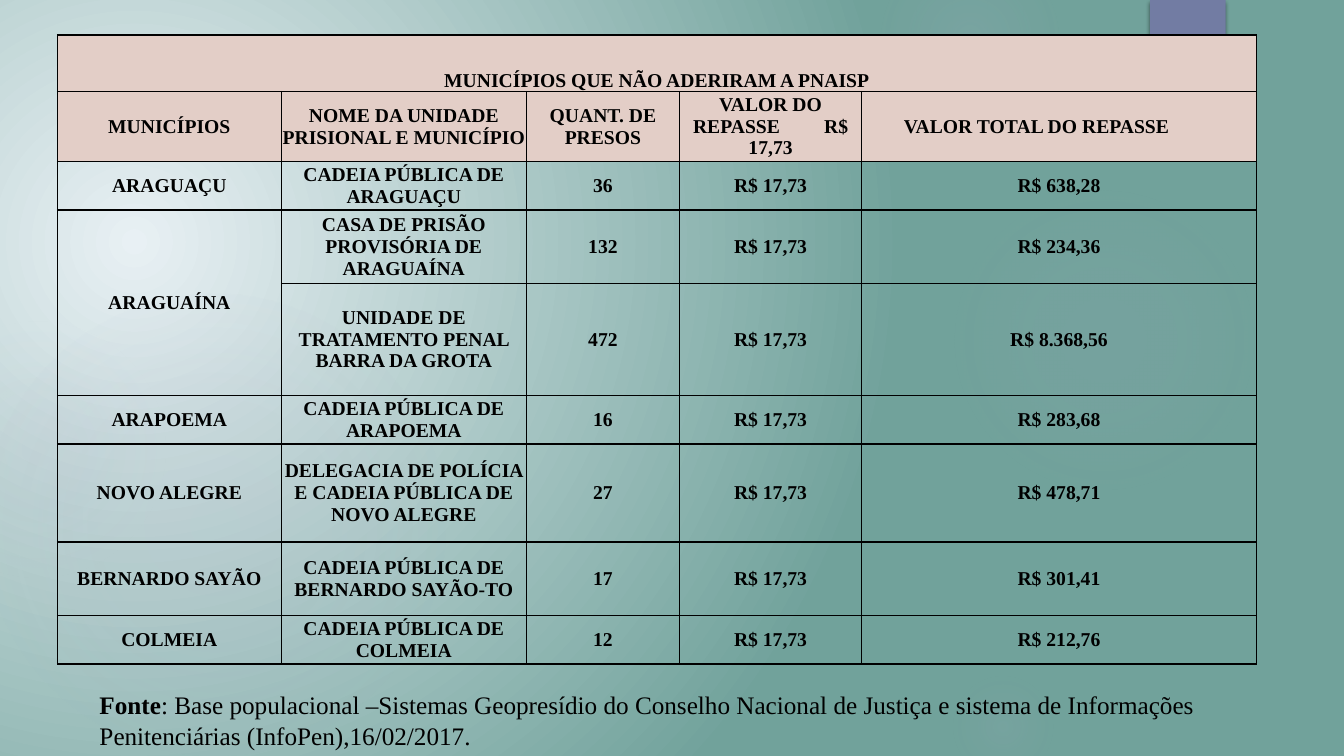
from lxml.etree import SubElement
from pptx import Presentation
from pptx.dml.color import RGBColor
from pptx.enum.shapes import MSO_SHAPE
from pptx.enum.text import MSO_ANCHOR, PP_ALIGN
from pptx.oxml import parse_xml
from pptx.oxml.ns import nsdecls, qn
from pptx.util import Pt

rgb = RGBColor.from_string
FONT = {"name": "Times New Roman", "bold": True}


def set_radial_fill(parent, stops, to):
    """Replace the solid fill in parent; stops are (position, colour, opacity) in percent."""
    marks = "".join(
        f'<a:gs pos="{pos * 1000}"><a:srgbClr val="{color}">'
        f'<a:alpha val="{alpha * 1000}"/></a:srgbClr></a:gs>'
        for pos, color, alpha in stops)
    edges = " ".join(f'{side}="{v * 1000}"' for side, v in zip("ltrb", to))
    grad = parse_xml(
        f'<a:gradFill {nsdecls("a")} rotWithShape="1"><a:gsLst>{marks}</a:gsLst>'
        f'<a:path path="circle"><a:fillToRect {edges}/></a:path></a:gradFill>')
    parent.replace(parent.find(qn("a:solidFill")), grad)


def add_run(p, text, size, **extra):
    r = p.add_run()
    r.text = text
    for key, value in {**FONT, "size": Pt(size), **extra}.items():
        setattr(r.font, key, value)
    r.font.color.rgb = rgb("000000")
    return r


prs = Presentation()
prs.slide_width, prs.slide_height = Pt(960), Pt(540)
s = prs.slides.add_slide(prs.slide_layouts[6])

# Background
s.background.fill.solid()
set_radial_fill(s.element.find(".//" + qn("p:bgPr")),
                [(0, "E8F0F4", 100), (100, "71A29B", 100)], (45, 65, 125, 100))

# Glowing circles: left, top, diameter, gradient stops
HAZE = "AAB0C8"
circles = [
    (-12, 210, 330, [(0, HAZE, 11), (36, HAZE, 10), (75, HAZE, 0)]),
    (-66, 228, 186, [(0, HAZE, 8), (36, HAZE, 5), (71, "EBF2F4", 0)]),
    (677.5, 132, 222, [(0, HAZE, 7), (36, HAZE, 6), (69, HAZE, 0)]),
    (630, -36, 126, [(0, HAZE, 14), (36, HAZE, 7), (73, HAZE, 0)]),
    (677.5, 480, 78, [(0, HAZE, 10), (31, HAZE, 5), (66, HAZE, 0)]),
]
for left, top, size, stops in circles:
    sp = s.shapes.add_shape(MSO_SHAPE.OVAL, Pt(left), Pt(top), Pt(size), Pt(size))
    sp.shadow.inherit = False
    sp.line.fill.background()
    sp.fill.solid()
    set_radial_fill(sp._element.spPr, stops, (50, 50, 50, 50))

# Tab at the top edge
tab = s.shapes.add_shape(MSO_SHAPE.RECTANGLE, Pt(821.5), Pt(0), Pt(54), Pt(90))
tab.fill.solid()
tab.fill.fore_color.rgb = rgb("727CA3")
tab.line.fill.background()
tab.shadow.inherit = False
tab._element.spPr.find(qn("a:effectLst")).append(parse_xml(
    f'<a:outerShdw {nsdecls("a")} blurRad="{Pt(3)}" dist="{Pt(2)}" dir="5400000" '
    'rotWithShape="0"><a:srgbClr val="000000"><a:alpha val="45000"/></a:srgbClr></a:outerShdw>'))

# Table
PRICE = "R$ 17,73"
rows = [
    ["MUNICÍPIOS QUE NÃO ADERIRAM A PNAISP", "", "", "", ""],
    ["MUNICÍPIOS", "NOME DA UNIDADE PRISIONAL E MUNICÍPIO", "QUANT. DE PRESOS",
     "VALOR DO REPASSE", "VALOR TOTAL DO REPASSE"],
    ["ARAGUAÇU", "CADEIA PÚBLICA DE ARAGUAÇU", "36", PRICE, "R$ 638,28"],
    ["ARAGUAÍNA", "CASA DE PRISÃO PROVISÓRIA DE ARAGUAÍNA", "132", PRICE, "R$ 234,36"],
    ["", "UNIDADE DE TRATAMENTO PENAL BARRA DA GROTA", "472", PRICE, "R$ 8.368,56"],
    ["ARAPOEMA", "CADEIA PÚBLICA DE ARAPOEMA", "16", PRICE, "R$ 283,68"],
    ["NOVO ALEGRE", "DELEGACIA DE POLÍCIA E CADEIA PÚBLICA DE NOVO ALEGRE", "27", PRICE,
     "R$ 478,71"],
    ["BERNARDO SAYÃO", "CADEIA PÚBLICA DE BERNARDO SAYÃO-TO", "17", PRICE, "R$ 301,41"],
    ["COLMEIA", "CADEIA PÚBLICA DE COLMEIA", "12", PRICE, "R$ 212,76"],
]
widths = [160, 175, 109.5, 130, 282]
heights = [40.4, 50, 34.6, 52.6, 80, 34.6, 70, 52.6, 34.6]

tbl = s.shapes.add_table(len(rows), len(widths), Pt(41), Pt(25),
                         Pt(sum(widths)), Pt(sum(heights))).table
tbl.first_row = tbl.horz_banding = False
for col, width in zip(tbl.columns, widths):
    col.width = Pt(width)
for row, height in zip(tbl.rows, heights):
    row.height = Pt(height)
tbl.cell(0, 0).merge(tbl.cell(0, 4))
tbl.cell(3, 0).merge(tbl.cell(4, 0))

for i, texts in enumerate(rows):
    for j, text in enumerate(texts):
        cell = tbl.cell(i, j)
        for side in ("left", "top", "right", "bottom"):
            setattr(cell, f"margin_{side}", 0)
        cell.vertical_anchor = MSO_ANCHOR.MIDDLE if i else MSO_ANCHOR.BOTTOM
        if i < 2:
            cell.fill.solid()
            cell.fill.fore_color.rgb = rgb("E3CEC7")
        else:
            cell.fill.background()
        for k, side in enumerate("LRTB"):
            cell._tc.tcPr.insert(k, parse_xml(
                f'<a:ln{side} {nsdecls("a")} w="{Pt(1)}"><a:solidFill>'
                f'<a:srgbClr val="000000"/></a:solidFill></a:ln{side}>'))
        p = cell.text_frame.paragraphs[0]
        p.alignment = PP_ALIGN.CENTER
        if text:
            add_run(p, text, 14)

# Header details: a wide gap before the price, and a title set left of centre
p = tbl.cell(1, 3).text_frame.paragraphs[0]
gap = add_run(p, " ", 14)
gap.font._element.set("spc", "2800")
add_run(p, PRICE, 14)
tbl.cell(1, 4).margin_right = Pt(32)

# Source note
tf = s.shapes.add_textbox(Pt(64), Pt(489), Pt(847.5), Pt(51)).text_frame
tf.word_wrap = True
p = tf.paragraphs[0]
add_run(p, "Fonte", 18)
add_run(p, ": Base populacional –Sistemas Geopresídio do Conselho Nacional de Justiça e "
           "sistema de Informações Penitenciárias (InfoPen),16/02/2017.", 18, bold=False)

prs.save("out.pptx")
